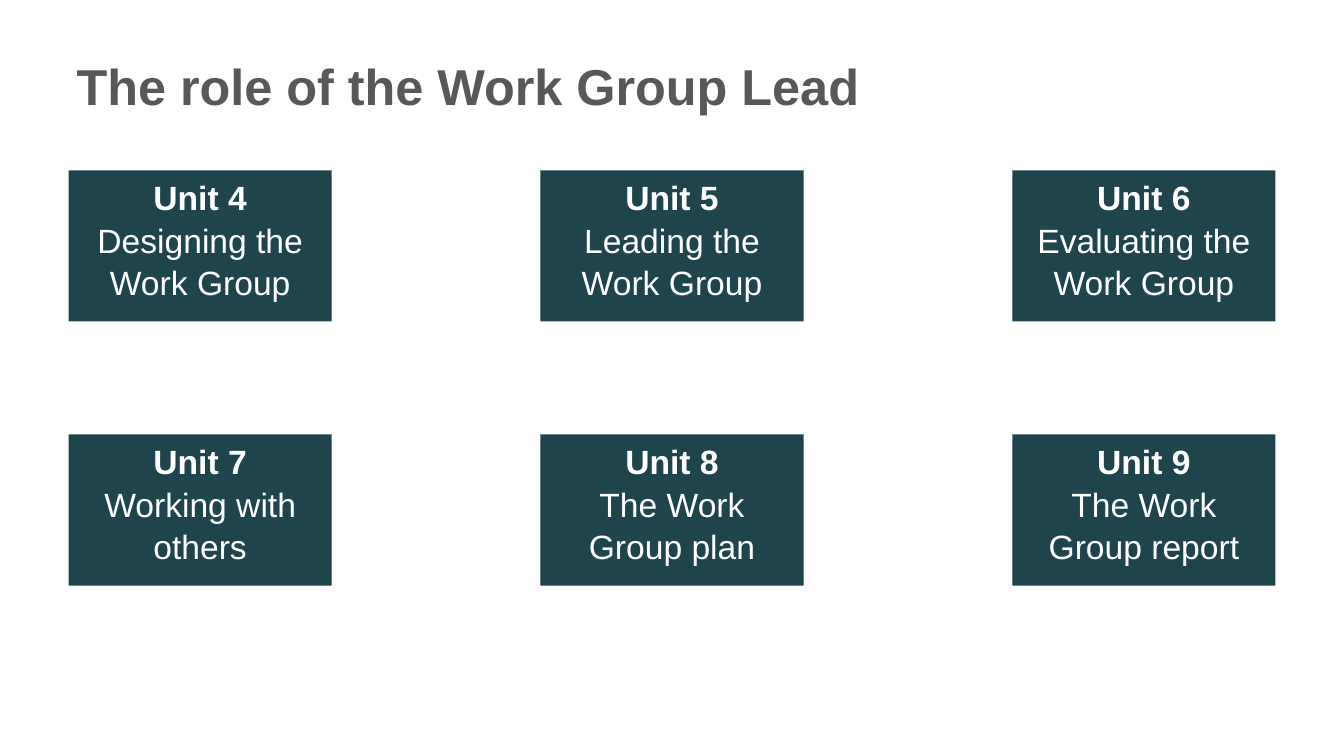
import dataclasses

import pptx
import pptx.dml.color
import pptx.enum.shapes
import pptx.enum.text
import pptx.util


@dataclasses.dataclass(frozen=True)
class Theme:
    """Hold the colours, font and type sizes of the slide."""

    font: str = "Arial"
    title_color: str = "585858"
    card_color: str = "20444C"
    card_text: str = "FFFFFF"
    title_size: int = 36
    card_size: int = 24
    card_spacing: float = 1.05


@dataclasses.dataclass(frozen=True)
class Grid:
    """Place equal cards by column and row, in inches."""

    left: float = 0.68
    top: float = 1.69
    col_pitch: float = 4.68
    row_pitch: float = 2.62
    width: float = 2.61
    height: float = 1.5

    def cell(self, col, row):
        """Return left, top, width and height of one cell."""
        x = self.left + col * self.col_pitch
        y = self.top + row * self.row_pitch
        return [pptx.util.Inches(v) for v in (x, y, self.width, self.height)]


class UnitSlide:
    """Draw titles and unit cards on one slide in one style."""

    def __init__(self, prs, theme, grid):
        """Add a title-only slide to the presentation."""
        self.theme = theme
        self.grid = grid
        self.slide = prs.slides.add_slide(prs.slide_layouts[5])

    def style(self, p, size, color, bold):
        """Format every run of a paragraph."""
        for r in p.runs:
            r.font.name = self.theme.font
            r.font.size = pptx.util.Pt(size)
            r.font.bold = bold
            r.font.color.rgb = pptx.dml.color.RGBColor.from_string(color)

    def title(self, text):
        """Fill and place the title placeholder."""
        sp = self.slide.shapes.title
        sp.left, sp.top = pptx.util.Inches(0.66), pptx.util.Inches(0.47)
        sp.width, sp.height = pptx.util.Inches(12), pptx.util.Inches(0.68)
        tf = sp.text_frame
        tf.text = text
        tf.auto_size = pptx.enum.text.MSO_AUTO_SIZE.NONE
        tf.vertical_anchor = pptx.enum.text.MSO_ANCHOR.BOTTOM
        tf.margin_bottom = 0
        p = tf.paragraphs[0]
        p.alignment = pptx.enum.text.PP_ALIGN.LEFT
        self.style(p, self.theme.title_size, self.theme.title_color, True)

    def card(self, col, row, unit, topic):
        """Add a filled card with a bold unit name above its topic."""
        theme = self.theme
        sp = self.slide.shapes.add_shape(
            pptx.enum.shapes.MSO_SHAPE.RECTANGLE, *self.grid.cell(col, row)
        )
        sp.shadow.inherit = False
        sp.fill.solid()
        sp.fill.fore_color.rgb = pptx.dml.color.RGBColor.from_string(theme.card_color)
        sp.line.fill.background()
        tf = sp.text_frame
        tf.word_wrap = True
        tf.vertical_anchor = pptx.enum.text.MSO_ANCHOR.TOP
        tf.text = f"{unit}\n{topic}"
        for p, bold in zip(tf.paragraphs, (True, False)):
            p.alignment = pptx.enum.text.PP_ALIGN.CENTER
            p.line_spacing = theme.card_spacing
            self.style(p, theme.card_size, theme.card_text, bold)


def main():
    """Build the slide and save it."""
    prs = pptx.Presentation()
    prs.slide_width = pptx.util.Inches(13.33)
    prs.slide_height = pptx.util.Inches(7.5)
    page = UnitSlide(prs, Theme(), Grid())
    page.title("The role of the Work Group Lead")
    topics = (
        "Designing the Work Group",
        "Leading the Work Group",
        "Evaluating the Work Group",
        "Working with others",
        "The Work Group plan",
        "The Work Group report",
    )
    for i, topic in enumerate(topics):
        row, col = divmod(i, 3)
        page.card(col, row, f"Unit {i + 4}", topic)
    prs.save("out.pptx")


if __name__ == "__main__":
    main()
